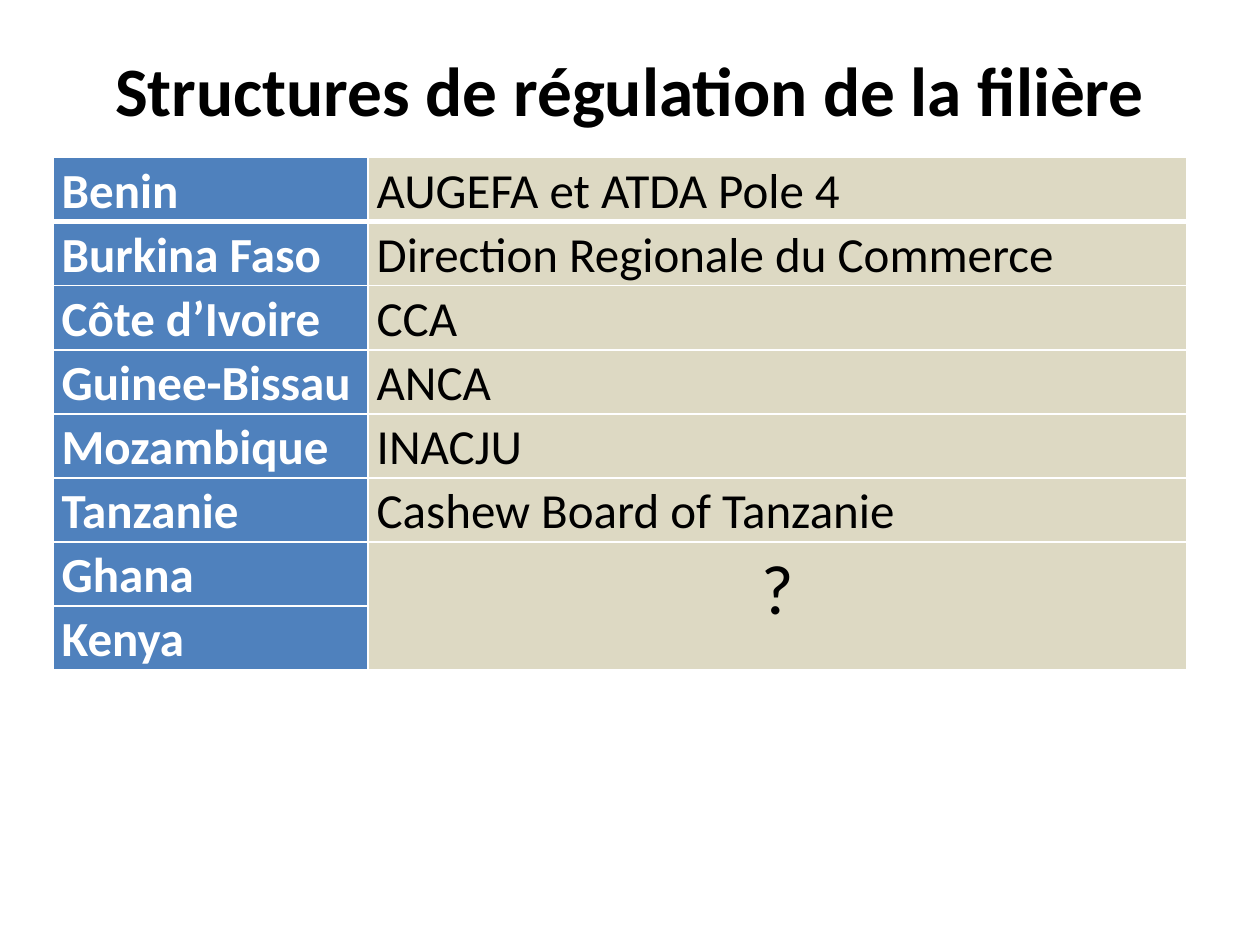
"""Build a slide listing the cashew regulation bodies by country."""
from lxml.etree import SubElement
from pptx import Presentation
from pptx.dml.color import RGBColor
from pptx.enum.text import MSO_ANCHOR, PP_ALIGN
from pptx.oxml.ns import qn
from pptx.util import Inches, Pt

TITLE = "Structures de régulation de la filière"
BODIES = [
    ("Benin", "AUGEFA et ATDA Pole 4"),
    ("Burkina Faso", "Direction Regionale du Commerce"),
    ("Côte d’Ivoire", "CCA"),
    ("Guinee-Bissau", "ANCA"),
    ("Mozambique", "INACJU"),
    ("Tanzanie", "Cashew Board of Tanzanie"),
    ("Ghana", "?"),
    ("Kenya", ""),
]
UNKNOWN_ROW = 6
COLUMN_WIDTHS = (2.5, 6.5)
ROW_HEIGHT = 0.5

FONT = "Calibri"
WHITE = RGBColor(0xFF, 0xFF, 0xFF)
BLACK = RGBColor(0x00, 0x00, 0x00)
BLUE = RGBColor(0x4F, 0x81, 0xBD)
BEIGE = RGBColor(0xDD, 0xD9, 0xC3)


def style_font(font, size, color, bold):
    font.name, font.size, font.bold = FONT, Pt(size), bold
    font.color.rgb = color


def add_borders(cell, row):
    properties = cell._tc.get_or_add_tcPr()
    widths = {"L": 1, "R": 1, "T": 3 if row == 1 else 1, "B": 3 if row == 0 else 1}
    for side, width in widths.items():
        line = SubElement(properties, qn(f"a:ln{side}"), w=str(Pt(width)))
        fill = SubElement(line, qn("a:solidFill"))
        SubElement(fill, qn("a:srgbClr"), val=str(WHITE))


def fill_cell(cell, text, row, column):
    is_country = column == 0
    is_unknown = text == "?"
    add_borders(cell, row)
    cell.fill.solid()
    cell.fill.fore_color.rgb = BLUE if is_country else BEIGE
    cell.margin_left = cell.margin_right = Inches(0.07)
    cell.margin_top = cell.margin_bottom = 0
    if not text:
        return
    cell.text_frame.text = text
    paragraph = cell.text_frame.paragraphs[0]
    paragraph.line_spacing = 1.07
    paragraph.alignment = PP_ALIGN.CENTER if is_unknown else PP_ALIGN.LEFT
    style_font(paragraph.runs[0].font, 40 if is_unknown else 28,
               WHITE if is_country else BLACK, is_country)


def add_title(slide):
    title = slide.shapes.title
    title.left, title.top = Inches(0.5), Inches(0.08)
    title.width, title.height = Inches(9), Inches(1.25)
    title.text_frame.text = TITLE
    title.text_frame.vertical_anchor = MSO_ANCHOR.MIDDLE
    heading = title.text_frame.paragraphs[0]
    heading.alignment = PP_ALIGN.CENTER
    style_font(heading.runs[0].font, 39.6, BLACK, True)


def add_bodies(slide):
    bodies = slide.shapes.add_table(
        len(BODIES), len(COLUMN_WIDTHS), Inches(0.42), Inches(1.25),
        Inches(sum(COLUMN_WIDTHS)), Inches(ROW_HEIGHT * len(BODIES))).table
    for column, width in zip(bodies.columns, COLUMN_WIDTHS):
        column.width = Inches(width)
    for row, entries in enumerate(BODIES):
        for column, text in enumerate(entries):
            fill_cell(bodies.cell(row, column), text, row, column)
    bodies.cell(UNKNOWN_ROW, 1).merge(bodies.cell(UNKNOWN_ROW + 1, 1))


def main():
    deck = Presentation()
    deck.slide_width, deck.slide_height = Inches(10), Inches(7.5)
    slide = deck.slides.add_slide(deck.slide_layouts[5])
    add_title(slide)
    add_bodies(slide)
    deck.save("out.pptx")


if __name__ == "__main__":
    main()
